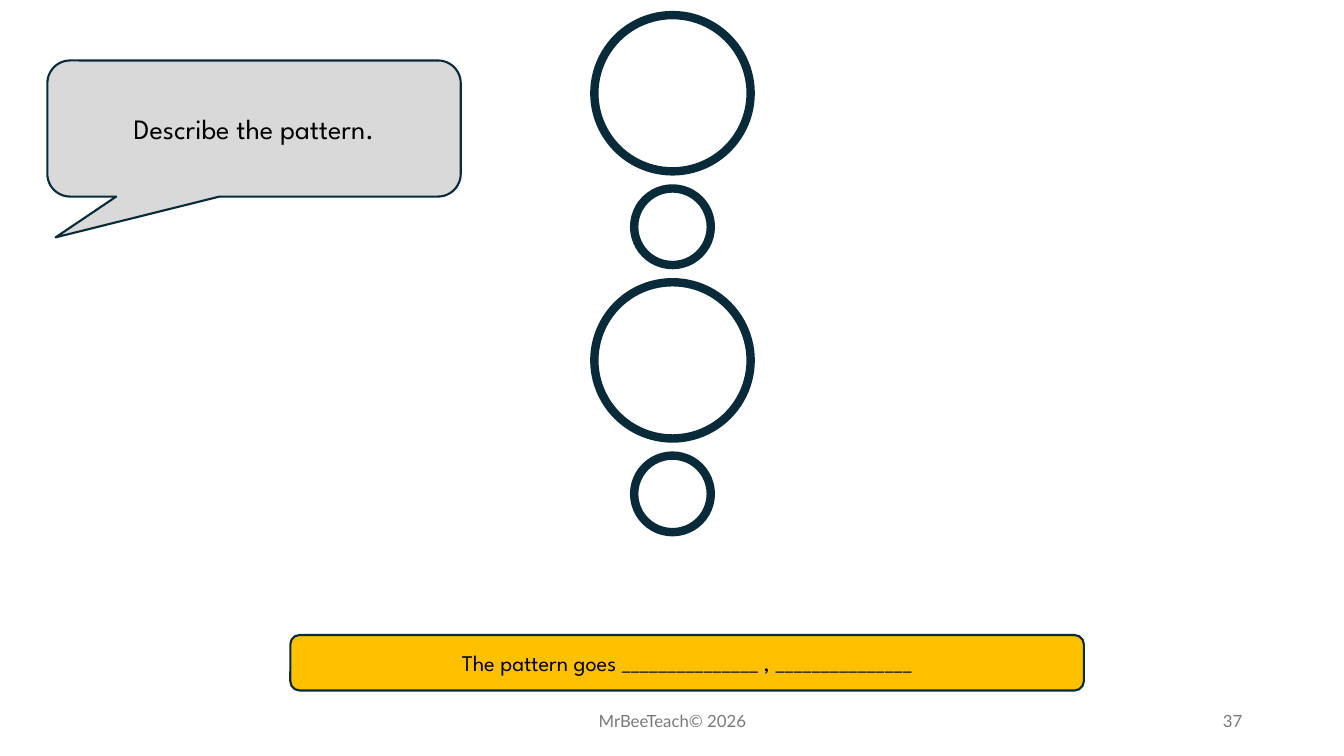
from pptx import Presentation
from pptx import util as u
from pptx.dml.color import RGBColor
from pptx.enum import shapes, text

HUES = {"ink": "092A39", "gold": "FFC000", "gray": "D9D9D9",
        "black": "000000", "muted": "797979"}
FORMS = shapes.MSO_SHAPE
ALIGN = text.PP_ALIGN


def hue(name):
    return RGBColor.from_string(HUES[name])


def write(frame, words, size=16, font="League Spartan", color="black",
          align=ALIGN.CENTER):
    frame.word_wrap = True
    frame.vertical_anchor = text.MSO_ANCHOR.MIDDLE
    para = frame.paragraphs[0]
    para.alignment = align
    run = para.add_run()
    run.text = words
    run.font.size = u.Pt(size)
    run.font.name = font
    run.font.color.rgb = hue(color)


class Page:
    """Holds the line style and the current slide."""

    def __init__(self, slide, line="ink"):
        self.slide = slide
        self.line = line

    def shape(self, form, box, fill=None, width=1.5):
        item = self.slide.shapes.add_shape(form, *map(u.Inches, box))
        item.shadow.inherit = False
        if fill:
            item.fill.solid()
            item.fill.fore_color.rgb = hue(fill)
        else:
            item.fill.background()
        item.line.color.rgb = hue(self.line)
        item.line.width = u.Pt(width)
        return item

    def ring(self, mid, top, size):
        self.shape(FORMS.OVAL, (mid - size / 2, top, size, size), width=6)

    def panel(self, form, box, words, fill, size):
        item = self.shape(form, box, fill)
        write(item.text_frame, words, size=size)
        return item

    def label(self, box, words, align):
        item = self.slide.shapes.add_textbox(*map(u.Inches, box))
        write(item.text_frame, words, size=12, font="Lato", color="muted",
              align=align)


def main():
    deck = Presentation()
    deck.slide_width = u.Inches(13.33)
    deck.slide_height = u.Inches(7.5)
    page = Page(deck.slides.add_slide(deck.slide_layouts[6]))

    page.label((4.42, 6.95, 4.5, 0.4), "MrBeeTeach© 2026", ALIGN.CENTER)
    page.label((9.42, 6.95, 3, 0.4), "37", ALIGN.RIGHT)

    for top in (0.15, 2.8):
        page.ring(6.67, top, 1.55)
        page.ring(6.67, top + 1.72, 0.76)

    page.panel(FORMS.ROUNDED_RECTANGLE, (2.88, 6.3, 7.87, 0.55),
               "The pattern goes _______________ , _______________",
               "gold", 16)
    bubble = page.panel(FORMS.ROUNDED_RECTANGULAR_CALLOUT,
                        (0.47, 0.6, 4.1, 1.35),
                        "Describe the pattern.", "gray", 20)
    bubble.adjustments[0] = -0.48
    bubble.adjustments[1] = 0.8

    deck.save("out.pptx")


if __name__ == "__main__":
    main()
